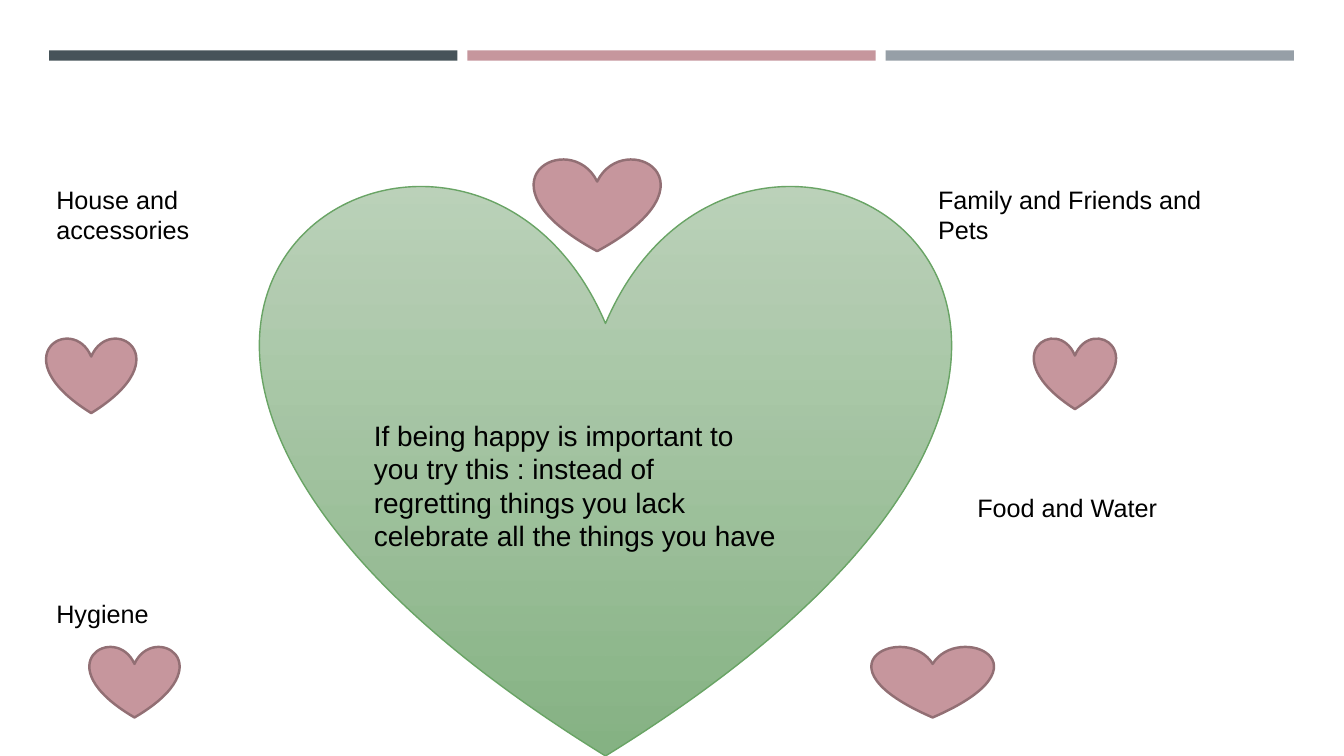
from dataclasses import dataclass

import lxml.etree
import pptx
import pptx.dml.color
import pptx.enum.shapes
import pptx.enum.text
import pptx.oxml.ns
import pptx.util
from pptx.util import Cm

COLOURS = {
    "slate": "465359",
    "rose": "C6969D",
    "grey": "969FA7",
    "rose_edge": "926F74",
    "green_top": "B4CDB2",
    "green_bottom": "86B384",
    "green_edge": "69A465",
    "text": "000000",
}
SHAPES = pptx.enum.shapes.MSO_SHAPE
BAR_LEFT, BAR_TOP, BAR_WIDTH, BAR_HEIGHT, BAR_STEP = 1.24, 1.27, 10.29, 0.26, 10.54


@dataclass
class Area:
    left: float
    top: float
    width: float
    height: float

    def lengths(self) -> list[pptx.util.Length]:
        return [Cm(value) for value in (self.left, self.top, self.width, self.height)]


@dataclass
class Label:
    text: str
    area: Area
    size: int = 18


BIG_HEART = Area(6.6, 4.52, 17.32, 14.53)
SMALL_HEARTS = [
    Area(26.06, 8.51, 2.06, 1.8),
    Area(21.97, 16.28, 3.07, 1.8),
    Area(1.17, 8.51, 2.26, 1.9),
    Area(2.26, 16.28, 2.26, 1.8),
    Area(13.46, 3.99, 3.18, 2.34),
]
LABELS = [
    Label(
        "If being happy is important to you try this : instead of "
        "regretting things you lack celebrate all the things you have",
        Area(9.17, 10.41, 10.74, 4.52),
        20,
    ),
    Label("Family and Friends and Pets", Area(23.39, 4.52, 7.98, 1.8)),
    Label("Food and Water", Area(24.38, 12.29, 6.55, 1.02)),
    Label("Hygiene", Area(1.17, 14.94, 4.01, 1.02)),
    Label("House and accessories", Area(1.17, 4.52, 4.32, 1.8)),
]


def colour(name: str) -> pptx.dml.color.RGBColor:
    return pptx.dml.color.RGBColor.from_string(COLOURS[name])


def apply(target, formats: dict) -> None:
    for name, value in formats.items():
        setattr(target, name, value)


def add_solid(page, kind, area: Area, fill: str):
    shape = page.shapes.add_shape(kind, *area.lengths())
    shape.shadow.inherit = False
    shape.fill.solid()
    shape.fill.fore_color.rgb = colour(fill)
    shape.line.fill.background()
    return shape


def add_heart(page, area: Area, fill: str, edge: str, weight: float):
    heart = add_solid(page, SHAPES.HEART, area, fill)
    heart.line.color.rgb = colour(edge)
    heart.line.width = pptx.util.Pt(weight)
    return heart


def add_gradient(heart) -> None:
    heart.fill.gradient()
    heart.fill.gradient_angle = 270
    for stop, name in zip(heart.fill.gradient_stops, ("green_top", "green_bottom")):
        stop.color.rgb = colour(name)
    first = heart.fill.gradient_stops[0]
    first.position = 0
    heart.fill.gradient_stops[1].position = 1
    tint = heart.element.spPr.find(".//" + pptx.oxml.ns.qn("a:srgbClr"))
    lxml.etree.SubElement(tint, pptx.oxml.ns.qn("a:alpha"), val="90000")


def add_label(page, label: Label) -> None:
    box = page.shapes.add_textbox(*label.area.lengths())
    apply(box.text_frame, {
        "word_wrap": True,
        "auto_size": pptx.enum.text.MSO_AUTO_SIZE.SHAPE_TO_FIT_TEXT,
    })
    span = box.text_frame.paragraphs[0].add_run()
    span.text = label.text
    apply(span.font, {"name": "Arial", "size": pptx.util.Pt(label.size)})
    span.font.color.rgb = colour("text")


def main() -> None:
    deck = pptx.Presentation()
    apply(deck, {"slide_width": Cm(33.87), "slide_height": Cm(19.05)})
    page = deck.slides.add_slide(deck.slide_layouts[6])
    for index, fill in enumerate(("slate", "rose", "grey")):
        area = Area(BAR_LEFT + index * BAR_STEP, BAR_TOP, BAR_WIDTH, BAR_HEIGHT)
        add_solid(page, SHAPES.RECTANGLE, area, fill)
    add_gradient(add_heart(page, BIG_HEART, "green_top", "green_edge", 1))
    for label in LABELS:
        add_label(page, label)
    for area in SMALL_HEARTS:
        add_heart(page, area, "rose", "rose_edge", 1.75)
    deck.save("out.pptx")


if __name__ == "__main__":
    main()
